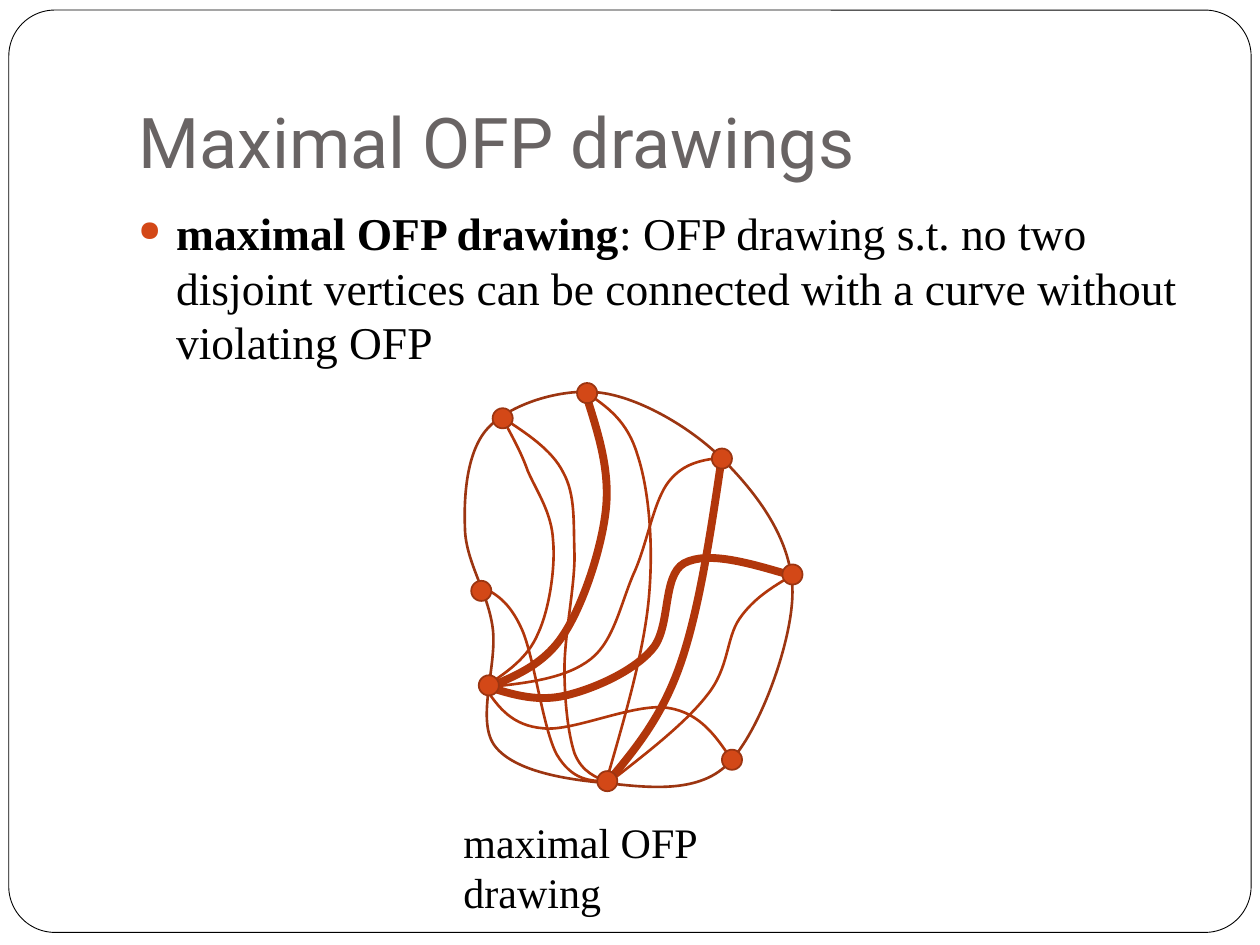
from pptx import Presentation
from pptx.dml.color import RGBColor as RGB
from pptx.enum.shapes import MSO_SHAPE as Kind
from pptx.enum.text import MSO_ANCHOR as Anchor
from pptx.oxml import parse_xml as to_xml
from pptx.oxml.ns import nsdecls, qn
from pptx.util import Inches, Pt

COLORS = {"paper": "FFFFFF", "ink": "000000", "title": "696464",
          "node": "D34817", "edge": "B1360B", "rim": "9C3511"}
SERIF = "Times New Roman"
THIN, THICK = 1.5, 4.5

NODES = [(3.88, 5.44), (4.82, 6.2), (3.99, 3.32), (6.29, 4.56),
         (4.66, 3.12), (5.81, 6.03), (3.82, 4.69), (5.73, 3.64)]

EDGES = [
    (THICK, [(3.89, 5.45), (4.1, 5.36), (4.32, 5.27), (4.47, 5.04),
             (4.63, 4.8), (4.78, 4.34), (4.81, 4.03),
             (4.84, 3.71), (4.74, 3.42), (4.65, 3.13)]),
    (THIN, [(3.9, 5.45), (4.2, 5.42), (4.5, 5.38), (4.69, 5.23),
            (4.88, 5.08), (4.93, 4.77), (5.04, 4.53),
            (5.14, 4.3), (5.19, 3.97), (5.31, 3.82),
            (5.43, 3.67), (5.58, 3.65), (5.74, 3.63)]),
    (THICK, [(3.9, 5.46), (4.09, 5.52), (4.28, 5.57), (4.49, 5.52),
             (4.7, 5.47), (5.01, 5.34), (5.17, 5.16),
             (5.33, 4.99), (5.25, 4.57), (5.43, 4.47),
             (5.62, 4.37), (5.95, 4.47), (6.29, 4.57)]),
    (THIN, [(3.86, 5.47), (3.96, 5.62), (4.07, 5.76), (4.31, 5.78),
            (4.55, 5.81), (5.05, 5.57), (5.31, 5.62),
            (5.56, 5.66), (5.69, 5.85), (5.82, 6.05)]),
    (THIN, [(3.88, 5.43), (4.03, 5.33), (4.19, 5.22), (4.27, 5.03),
            (4.36, 4.84), (4.41, 4.5), (4.39, 4.29),
            (4.38, 4.07), (4.26, 3.9), (4.19, 3.74),
            (4.13, 3.57), (4.05, 3.44), (3.98, 3.3)]),
    (THIN, [(4.82, 6.2), (4.68, 6.2), (4.54, 6.19), (4.42, 5.99),
            (4.31, 5.79), (4.24, 5.21), (4.14, 4.99),
            (4.04, 4.77), (3.93, 4.71), (3.81, 4.65)]),
    (THIN, [(4.83, 6.21), (4.73, 6.17), (4.62, 6.13), (4.56, 5.98),
            (4.51, 5.83), (4.48, 5.57), (4.48, 5.31),
            (4.48, 5.04), (4.56, 4.67), (4.56, 4.41),
            (4.55, 4.15), (4.57, 3.93), (4.47, 3.75),
            (4.38, 3.57), (4.18, 3.44), (3.98, 3.31)]),
    (THIN, [(4.81, 6.21), (4.96, 5.69), (5.11, 5.18), (5.15, 4.75),
            (5.19, 4.32), (5.15, 3.88), (5.06, 3.61),
            (4.98, 3.34), (4.82, 3.23), (4.66, 3.12)]),
    (THICK, [(4.82, 6.21), (5.03, 5.96), (5.25, 5.7), (5.4, 5.27),
             (5.55, 4.84), (5.64, 4.23), (5.73, 3.62)]),
    (THIN, [(4.82, 6.22), (5.13, 5.98), (5.44, 5.74), (5.61, 5.52),
            (5.79, 5.3), (5.76, 5.07), (5.87, 4.91),
            (5.98, 4.75), (6.13, 4.66), (6.28, 4.57)]),
]

RIM = [(4.76, 6.21), (4.45, 6.18), (4.06, 6.11), (3.92, 5.91),
       (3.78, 5.7), (3.95, 5.27), (3.91, 4.98),
       (3.87, 4.69), (3.69, 4.45), (3.69, 4.18),
       (3.68, 3.91), (3.71, 3.55), (3.89, 3.38),
       (4.07, 3.2), (4.48, 3.07), (4.79, 3.12),
       (5.11, 3.17), (5.53, 3.42), (5.78, 3.69),
       (6.03, 3.95), (6.29, 4.3), (6.29, 4.7),
       (6.29, 5.09), (6.03, 5.81), (5.78, 6.06),
       (5.53, 6.32), (5.07, 6.24), (4.76, 6.21)]


def color(name):
    return RGB.from_string(COLORS[name])


def add_run(para, text, size=24, font=SERIF, tint="ink", bold=False):
    run = para.add_run()
    run.text = text
    run.font.size = Pt(size)
    run.font.name = font
    run.font.bold = bold
    run.font.color.rgb = color(tint)


def add_bullet(para, indent, tint):
    props = para._p.get_or_add_pPr()
    props.set("marL", str(Inches(indent)))
    props.set("indent", str(-Inches(indent)))
    for body in (f'buClr {nsdecls("a")}><a:srgbClr val="{COLORS[tint]}"/></a:buClr>',
                 f'buSzPct {nsdecls("a")} val="63000"/>',
                 f'buChar {nsdecls("a")} char="●"/>'):
        props.append(to_xml("<a:" + body))


def bend(shape):
    track = shape._element.find(".//" + qn("a:path"))
    lines = track.findall(qn("a:lnTo"))
    for i in range(0, len(lines), 3):
        curve = to_xml(f'<a:cubicBezTo {nsdecls("a")}/>')
        lines[i].addprevious(curve)
        for line in lines[i:i + 3]:
            curve.append(line[0])
            track.remove(line)


class Deck:
    def __init__(self, slide):
        self.slide = slide
        self.shapes = slide.shapes

    def style(self, shape, fill, line, width):
        shape.shadow.inherit = False
        if fill:
            shape.fill.solid()
            shape.fill.fore_color.rgb = color(fill)
        else:
            shape.fill.background()
        shape.line.color.rgb = color(line)
        shape.line.width = Pt(width)

    def frame(self, x, y, w, h):
        shape = self.shapes.add_shape(
            Kind.ROUNDED_RECTANGLE, Inches(x), Inches(y), Inches(w), Inches(h))
        shape.adjustments[0] = 0.05
        self.style(shape, "paper", "ink", 0.5)

    def text(self, x, y, w, h, anchor=Anchor.TOP, base=0.05):
        frame = self.shapes.add_textbox(
            Inches(x), Inches(y), Inches(w), Inches(h)).text_frame
        frame.word_wrap = True
        frame.vertical_anchor = anchor
        frame.margin_bottom = Inches(base)
        return frame.paragraphs[0]

    def curve(self, points, width, tint="edge", close=False):
        spots = [(Inches(x), Inches(y)) for x, y in points]
        pen = self.shapes.build_freeform(*spots[0])
        pen.add_line_segments(spots[1:], close=False)
        shape = pen.convert_to_shape()
        bend(shape)
        if close:
            track = shape._element.find(".//" + qn("a:path"))
            track.append(to_xml(f'<a:close {nsdecls("a")}/>'))
        self.style(shape, None, tint, width)

    def node(self, x, y, size=0.16):
        shape = self.shapes.add_shape(
            Kind.OVAL, Inches(x - size / 2), Inches(y - size / 2),
            Inches(size), Inches(size))
        self.style(shape, "node", "rim", 1)


def main():
    show = Presentation()
    show.slide_width, show.slide_height = Inches(10), Inches(7.5)
    deck = Deck(show.slides.add_slide(show.slide_layouts[6]))
    deck.frame(0.07, 0.08, 9.86, 7.32)

    title = deck.text(1, 0.3, 8.5, 1.25, Anchor.BOTTOM, 0.1)
    add_run(title, "Maximal OFP drawings", size=40, font="Roboto", tint="title")

    body = deck.text(1, 1.58, 8.57, 5)
    body.space_before = Pt(5.8)
    add_bullet(body, 0.3, "node")
    add_run(body, "maximal OFP drawing", size=26, bold=True)
    add_run(body, ": OFP drawing s.t. no two disjoint vertices can be "
            "connected with a curve without violating OFP", size=26)

    add_run(deck.text(3.58, 6.43, 2.94, 0.5), "maximal OFP drawing")

    deck.curve(RIM, THIN, "rim", close=True)
    for width, points in EDGES:
        deck.curve(points, width)
    for x, y in NODES:
        deck.node(x, y)
    show.save("out.pptx")


if __name__ == "__main__":
    main()
